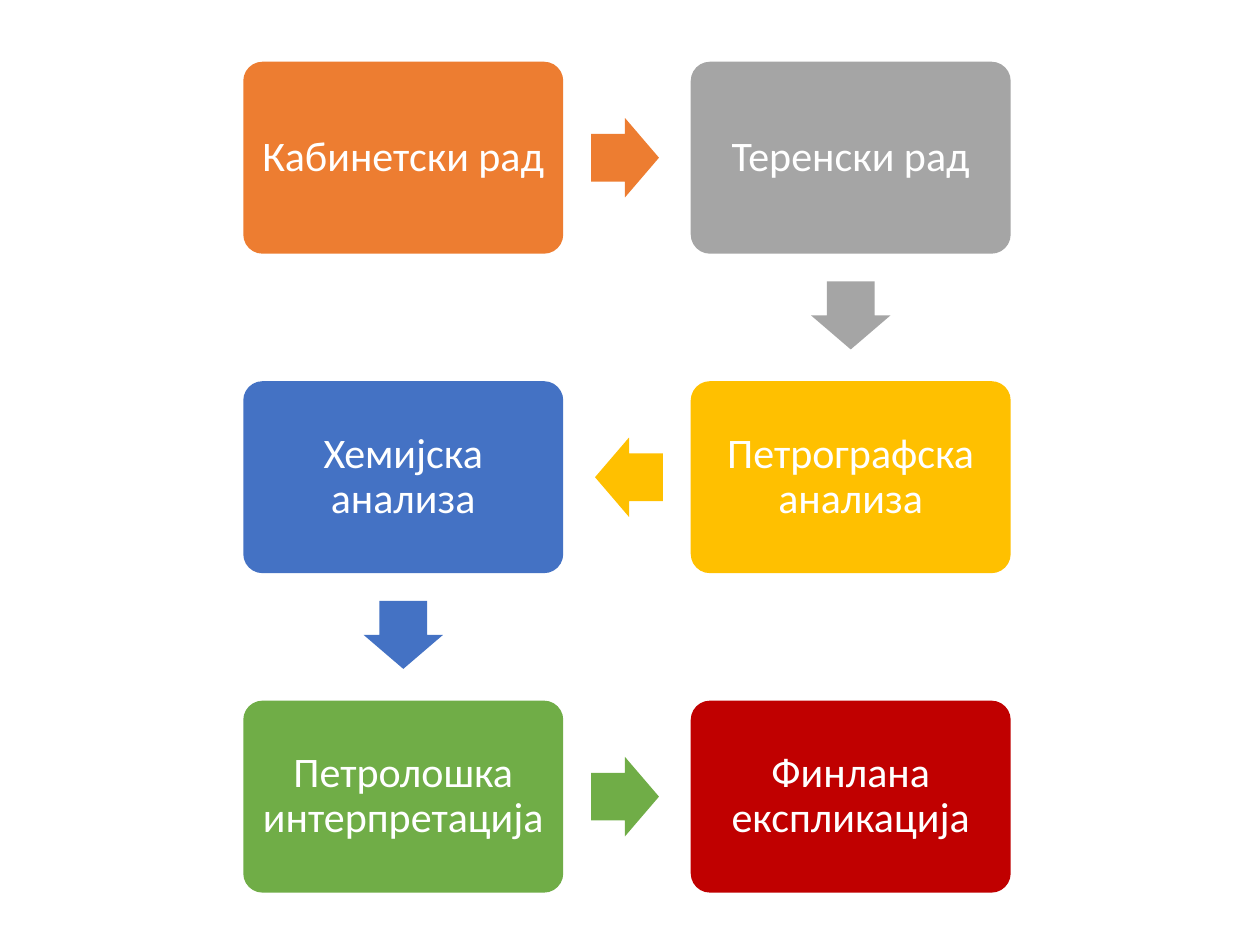
"""Build a slide with a six-step research workflow that snakes down two columns."""
import math

import pptx
import pptx.dml.color
import pptx.enum.shapes
import pptx.enum.text
import pptx.util

Cm = pptx.util.Cm
SHAPES = pptx.enum.shapes.MSO_SHAPE
COLOURS = {
    "orange": "ED7D31",
    "grey": "A5A5A5",
    "gold": "FFC000",
    "blue": "4472C4",
    "green": "70AD47",
    "red": "C00000",
    "text": "FFFFFF",
}
STEPS = [
    ("Кабинетски рад", "orange", 0, 0),
    ("Теренски рад", "grey", 1, 0),
    ("Петрографска анализа", "gold", 1, 1),
    ("Хемијска анализа", "blue", 0, 1),
    ("Петролошка интерпретација", "green", 0, 2),
    ("Финлана експликација", "red", 1, 2),
]
FIRST_X, FIRST_Y = 8.13, 3.18
PITCH_X, PITCH_Y = 9.02, 6.44
BOX_WIDTH, BOX_HEIGHT = 6.45, 3.87
ARROW_LENGTH, ARROW_WIDTH = 1.37, 1.6
ARROW_SETBACK = 0.04
FRAME_FORMAT = {
    "word_wrap": True,
    "vertical_anchor": pptx.enum.text.MSO_ANCHOR.MIDDLE,
    "margin_left": Cm(0.24),
    "margin_right": Cm(0.24),
    "margin_top": Cm(0.24),
    "margin_bottom": Cm(0.24),
}
PARA_FORMAT = {"alignment": pptx.enum.text.PP_ALIGN.CENTER, "line_spacing": 0.9}
FONT_FORMAT = {"name": "Calibri", "size": pptx.util.Pt(24)}


def set_format(target, values):
    for name, value in values.items():
        setattr(target, name, value)


def add_filled_shape(page, kind, centre_x, centre_y, width, height, adjustments, colour):
    shape = page.shapes.add_shape(
        kind, Cm(centre_x - width / 2), Cm(centre_y - height / 2), Cm(width), Cm(height)
    )
    for index, value in enumerate(adjustments):
        shape.adjustments[index] = value
    shape.shadow.inherit = False
    shape.fill.solid()
    shape.fill.fore_color.rgb = pptx.dml.color.RGBColor.from_string(COLOURS[colour])
    shape.line.fill.background()
    return shape


deck = pptx.Presentation()
deck.slide_width, deck.slide_height = Cm(25.4), Cm(19.05)
page = deck.slides.add_slide(deck.slide_layouts[6])

centres = [(FIRST_X + column * PITCH_X, FIRST_Y + row * PITCH_Y) for _, _, column, row in STEPS]

for position, (label, colour, column, row) in enumerate(STEPS):
    x, y = centres[position]
    box = add_filled_shape(
        page, SHAPES.ROUNDED_RECTANGLE, x, y, BOX_WIDTH, BOX_HEIGHT, [0.1], colour
    )
    set_format(box.text_frame, FRAME_FORMAT)
    para = box.text_frame.paragraphs[0]
    set_format(para, PARA_FORMAT)
    span = para.add_run()
    span.text = label
    set_format(span.font, FONT_FORMAT)
    span.font.color.rgb = pptx.dml.color.RGBColor.from_string(COLOURS["text"])

    if position + 1 < len(STEPS):
        next_x, next_y = centres[position + 1]
        angle = math.atan2(next_y - y, next_x - x)
        arrow = add_filled_shape(
            page,
            SHAPES.RIGHT_ARROW,
            (x + next_x) / 2 - ARROW_SETBACK * math.cos(angle),
            (y + next_y) / 2 - ARROW_SETBACK * math.sin(angle),
            ARROW_LENGTH,
            ARROW_WIDTH,
            [0.6, 0.5],
            colour,
        )
        arrow.rotation = math.degrees(angle)

deck.save("out.pptx")
